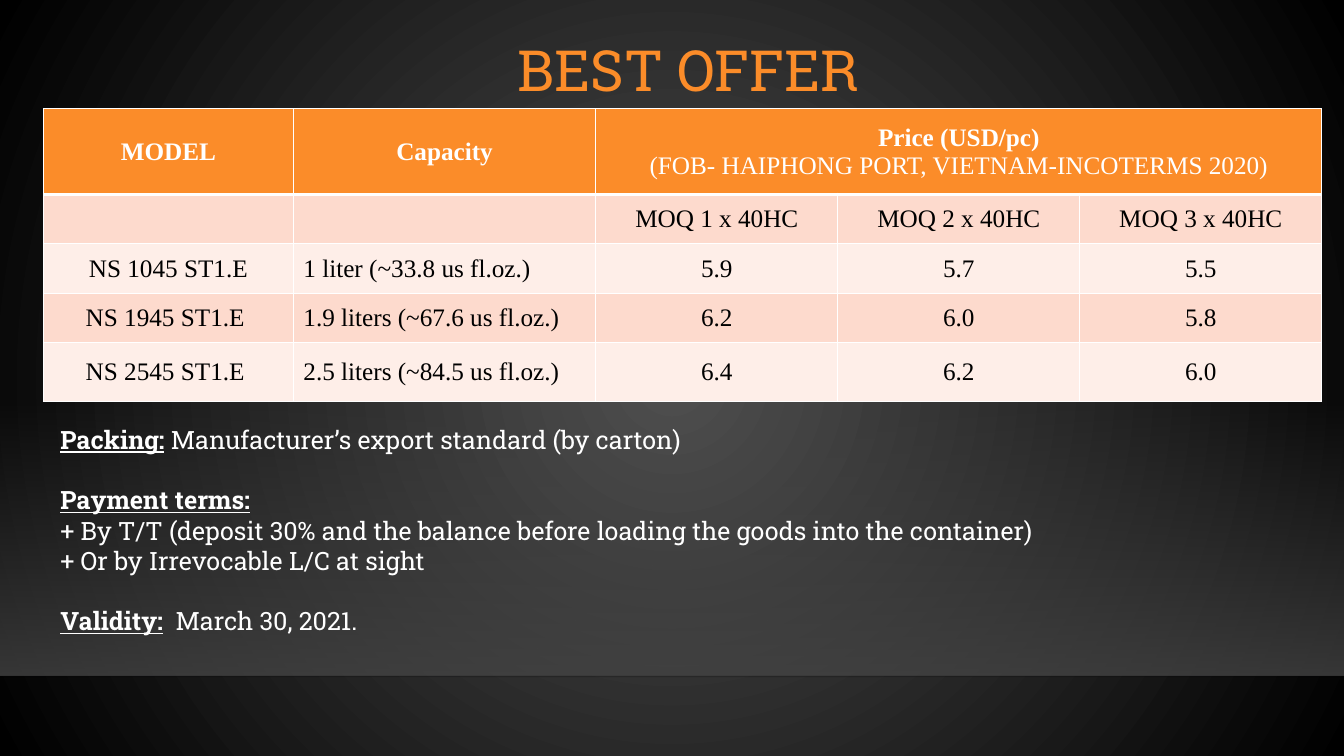
from dataclasses import dataclass

from lxml import etree
from pptx import Presentation
from pptx.dml.color import RGBColor
from pptx.enum import shapes, text
from pptx.oxml import ns, parse_xml
from pptx.util import Emu, Pt

PX = 9144  # 100 px to the inch
ORANGE, WHITE, BLACK = "FB8C29", "FFFFFF", "000000"
BANDS = ("FDDACD", "FEEEE8")
SLAB, SERIF = "Roboto Slab", "Times New Roman"
CENTER, LEFT = text.PP_ALIGN.CENTER, text.PP_ALIGN.LEFT


@dataclass
class Stop:
    position: int
    color: str
    opacity: int = 100


@dataclass
class Term:
    label: str = ""
    detail: str = ""
    gap: float = 0


COLUMNS = (248, 300, 240, 240, 240)
ROWS = (85, 49, 49, 49, 58)
HEADER = ("MODEL", "Capacity", "Price (USD/pc)")
PORT = "(FOB- HAIPHONG PORT, VIETNAM-INCOTERMS 2020)"
OFFERS = (
    ("", "", "MOQ 1 x 40HC", "MOQ 2 x 40HC", "MOQ 3 x 40HC"),
    ("NS 1045 ST1.E", "1 liter (~33.8 us fl.oz.)", "5.9", "5.7", "5.5"),
    ("NS 1945 ST1.E ", "1.9 liters (~67.6 us fl.oz.)", "6.2", "6.0", "5.8"),
    ("NS 2545 ST1.E ", "2.5 liters (~84.5 us fl.oz.)", "6.4", "6.2", "6.0"),
)
TERMS = (
    Term("Packing:", " Manufacturer’s export standard (by carton)"),
    Term("Payment terms:", gap=21.6),
    Term(detail="+ By T/T (deposit 30% and the balance before loading the goods into the container)"),
    Term(detail="+ Or by Irrevocable L/C at sight"),
    Term("Validity:", "  March 30, 2021.", gap=21.6),
)


def px(*lengths: int) -> list[Emu]:
    return [Emu(length * PX) for length in lengths]


def rgb(color: str) -> RGBColor:
    return RGBColor.from_string(color)


def write(para, words: str, *, font: str, size: float, color: str,
          bold: bool = False, underline: bool = False) -> None:
    span = para.add_run()
    span.text = words
    span.font.name, span.font.size = font, Pt(size)
    span.font.bold, span.font.underline = bold, underline
    span.font.color.rgb = rgb(color)


def set_gradient(element, stops: tuple[Stop, ...], direction: str) -> None:
    """Put a gradient where the element has its solid fill."""
    marks = "".join(
        f'<a:gs pos="{stop.position * 1000}"><a:srgbClr val="{stop.color}">'
        f'<a:alpha val="{stop.opacity * 1000}"/></a:srgbClr></a:gs>' for stop in stops)
    solid = element.find(".//" + ns.qn("a:solidFill"))
    solid.getparent().replace(solid, parse_xml(
        f'<a:gradFill {ns.nsdecls("a")} rotWithShape="1"><a:gsLst>{marks}</a:gsLst>'
        f'{direction}</a:gradFill>'))


def set_borders(cell, bottom: float = 1, top: float = 1) -> None:
    properties = cell._tc.get_or_add_tcPr()
    for index, (side, width) in enumerate(
            (("lnL", 1), ("lnR", 1), ("lnT", top), ("lnB", bottom))):
        properties.insert(index, parse_xml(
            f'<a:{side} {ns.nsdecls("a")} w="{Pt(width)}"><a:solidFill>'
            f'<a:srgbClr val="{WHITE}"/></a:solidFill></a:{side}>'))


def draw_backdrop(page) -> None:
    page.background.fill.solid()
    set_gradient(page.background._cSld, (Stop(0, "505050"), Stop(100, BLACK)),
                 '<a:path path="circle"><a:fillToRect l="50000" t="50000" r="50000" b="50000"/></a:path>')
    glow = page.shapes.add_shape(shapes.MSO_SHAPE.RECTANGLE, *px(0, 396, 1333, 274))
    glow.shadow.inherit = False
    glow.line.fill.background()
    glow.fill.solid()
    set_gradient(glow._element.spPr, (Stop(0, "454545", 0), Stop(100, "454545", 80)),
                 '<a:lin ang="5400000" scaled="0"/>')
    edge = page.shapes.add_connector(shapes.MSO_CONNECTOR.STRAIGHT, *px(0, 671, 1333, 671))
    edge.line.width = Pt(1)
    edge.line.color.rgb = rgb("000001")
    properties = edge._element.spPr
    shade = properties.find(".//" + ns.qn("a:srgbClr"))
    etree.SubElement(shade, ns.qn("a:alpha")).set("val", "20000")
    etree.SubElement(properties, ns.qn("a:effectLst"))


def draw_title(page) -> None:
    title = page.shapes.title
    title.left, title.top, title.width, title.height = px(175, 45, 1016, 55)
    title.text_frame.vertical_anchor = text.MSO_ANCHOR.MIDDLE
    title.text_frame.auto_size = text.MSO_AUTO_SIZE.NONE
    para = title.text_frame.paragraphs[0]
    para.alignment, para.line_spacing = CENTER, 0.9
    write(para, "BEST OFFER", font=SLAB, size=40.5, color=ORANGE)


def draw_offers(page) -> None:
    table = page.shapes.add_table(
        len(ROWS), len(COLUMNS), *px(43, 108, sum(COLUMNS), sum(ROWS))).table
    for column, width in zip(table.columns, px(*COLUMNS)):
        column.width = width
    for row, height in zip(table.rows, px(*ROWS)):
        row.height = height
    table.cell(0, 2).merge(table.cell(0, 4))

    for y in range(len(ROWS)):
        words = OFFERS[y - 1] if y else HEADER + ("", "")
        for x, entry in enumerate(words):
            cell = table.cell(y, x)
            cell.vertical_anchor = text.MSO_ANCHOR.MIDDLE
            cell.fill.solid()
            cell.fill.fore_color.rgb = rgb(BANDS[(y - 1) % 2] if y else ORANGE)
            set_borders(cell, bottom=1 if y else 3, top=3 if y == 1 else 1)
            para = cell.text_frame.paragraphs[0]
            para.alignment = LEFT if x == 1 and y else CENTER
            if entry:
                write(para, entry, font=SERIF, size=18, color=BLACK if y else WHITE, bold=not y)

    port = table.cell(0, 2).text_frame.add_paragraph()
    port.alignment = CENTER
    write(port, PORT, font=SERIF, size=18, color=WHITE)


def draw_terms(page) -> None:
    box = page.shapes.add_textbox(*px(50, 416, 989, 222))
    frame = box.text_frame
    frame.word_wrap = False
    frame.auto_size = text.MSO_AUTO_SIZE.SHAPE_TO_FIT_TEXT
    for index, term in enumerate(TERMS):
        para = frame.add_paragraph() if index else frame.paragraphs[0]
        if term.gap:
            para.space_before = Pt(term.gap)
        if term.label:
            write(para, term.label, font=SLAB, size=18, color=WHITE, bold=True, underline=True)
        if term.detail:
            write(para, term.detail, font=SLAB, size=18, color=WHITE)


def main() -> None:
    deck = Presentation()
    deck.slide_width, deck.slide_height = px(1333, 750)
    page = deck.slides.add_slide(deck.slide_layouts[5])
    draw_backdrop(page)
    draw_title(page)
    draw_offers(page)
    draw_terms(page)
    deck.save("out.pptx")


if __name__ == "__main__":
    main()
